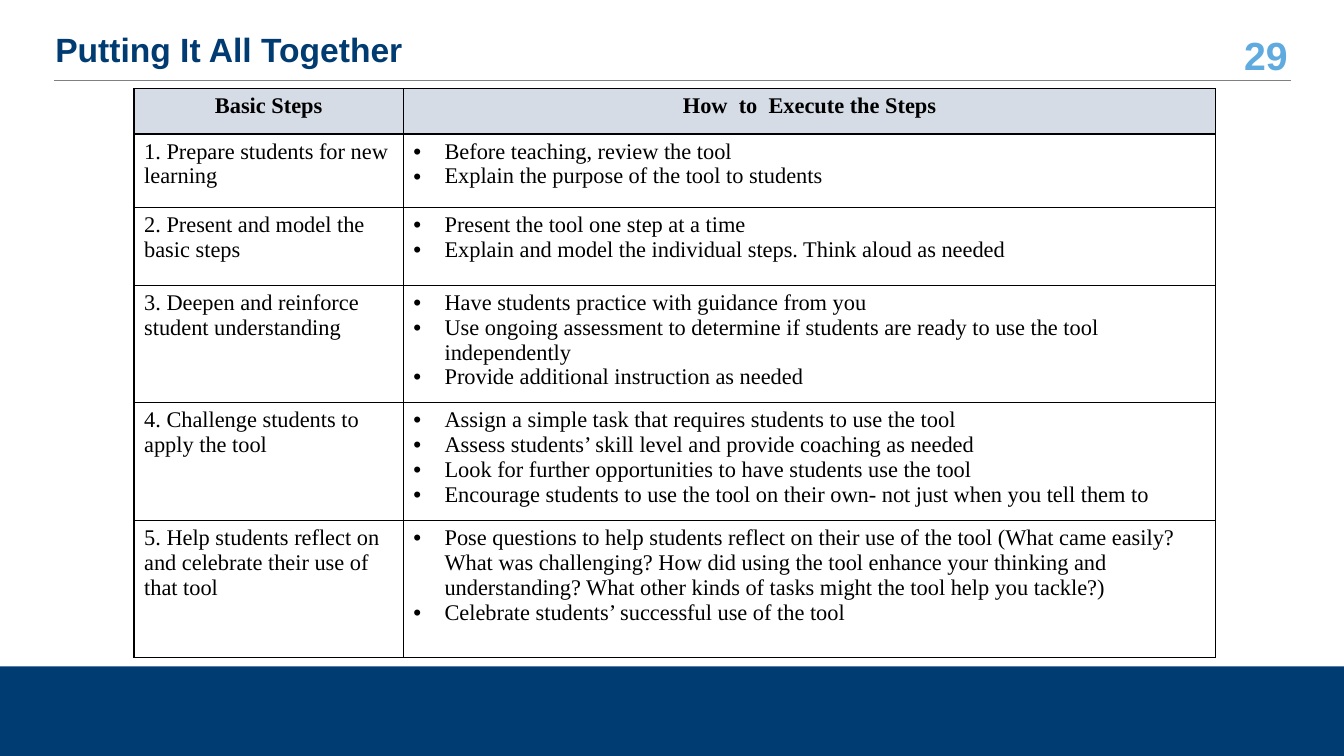
from lxml import etree
from pptx import Presentation
from pptx.dml.color import RGBColor
from pptx.enum.shapes import MSO_CONNECTOR, MSO_SHAPE
from pptx.enum.text import MSO_ANCHOR, PP_ALIGN
from pptx.oxml.ns import qn
from pptx.util import Inches, Pt

LEFT, CENTER, RIGHT = PP_ALIGN.LEFT, PP_ALIGN.CENTER, PP_ALIGN.RIGHT
MIDDLE = MSO_ANCHOR.MIDDLE
RECT, STRAIGHT = MSO_SHAPE.RECTANGLE, MSO_CONNECTOR.STRAIGHT
NAVY = RGBColor(0x00, 0x3B, 0x71)
SKY = RGBColor(0x5F, 0xAA, 0xDE)
GRAY = RGBColor(0x80, 0x80, 0x80)
PALE = RGBColor(0xD6, 0xDC, 0xE5)
WHITE = RGBColor(0xFF, 0xFF, 0xFF)
BLACK = RGBColor(0x00, 0x00, 0x00)

HEADS = ["Basic Steps", "How  to  Execute the Steps"]
STEPS = [
    ("1. Prepare students for new learning", [
        "Before teaching, review the tool",
        "Explain the purpose of the tool to students"]),
    ("2. Present and model the basic steps", [
        "Present the tool one step at a time",
        "Explain and model the individual steps. Think aloud as needed"]),
    ("3. Deepen and reinforce student understanding", [
        "Have students practice with guidance from you",
        "Use ongoing assessment to determine if students are ready to use "
        "the tool independently",
        "Provide additional instruction as needed"]),
    ("4. Challenge students to apply the tool", [
        "Assign a simple task that requires students to use the tool",
        "Assess students’ skill level and provide coaching as needed",
        "Look for further opportunities to have students use the tool",
        "Encourage students to use the tool on their own- not just when you "
        "tell them to"]),
    ("5. Help students reflect on and celebrate their use of that tool", [
        "Pose questions to help students reflect on their use of the tool "
        "(What came easily? What was challenging? How did using the tool "
        "enhance your thinking and understanding? What other kinds of tasks "
        "might the tool help you tackle?)",
        "Celebrate students’ successful use of the tool"]),
]
COLS = [2.67, 8.06]
ROWS = [0.45, 0.73, 0.77, 1.04, 1.04, 1.36]


def style(par, look):
    for key, value in look.items():
        if key == "color":
            par.font.color.rgb = value
        else:
            setattr(par.font, key, value)


def fill_cell(cell, lines, look, back, align=LEFT, dots=False):
    cell.text_frame.text = "\n".join(lines)
    for par in cell.text_frame.paragraphs:
        par.alignment = align
        if dots:
            props = par._p.get_or_add_pPr()
            props.set("marL", str(Inches(0.31)))
            props.set("indent", str(-Inches(0.31)))
            etree.SubElement(props, qn("a:buFont")).set("typeface", "Arial")
            etree.SubElement(props, qn("a:buChar")).set("char", "•")
        style(par, look)
    # Borders come before the fill in the cell's XML
    props = cell._tc.get_or_add_tcPr()
    for side in ("lnL", "lnR", "lnT", "lnB"):
        edge = etree.SubElement(props, qn("a:" + side), w=str(Pt(1)))
        paint = etree.SubElement(edge, qn("a:solidFill"))
        etree.SubElement(paint, qn("a:srgbClr")).set("val", str(BLACK))
    cell.fill.solid()
    cell.fill.fore_color.rgb = back


deck = Presentation()
deck.slide_width, deck.slide_height = Inches(13.33), Inches(7.5)
W, H = deck.slide_width, deck.slide_height
slide = deck.slides.add_slide(deck.slide_layouts[6])
shapes = slide.shapes

# Footer band
band_top = Inches(6.61)
band = shapes.add_shape(RECT, 0, band_top, W, H - band_top)
band.shadow.inherit = False
band.fill.solid()
band.fill.fore_color.rgb = NAVY
band.line.fill.background()

# Title and page number
for text, left, top, width, size, color, align, gap in [
    ("29", 12.07, 0.33, 0.8, 28, SKY, RIGHT, 1),
    ("Putting It All Together", 0.45, 0.3, 11.6, 24, NAVY, LEFT, 0.9),
]:
    box = shapes.add_textbox(Inches(left), Inches(top), Inches(width), Inches(0.42))
    frame = box.text_frame
    frame.word_wrap = True
    frame.vertical_anchor = MIDDLE
    par = frame.paragraphs[0]
    par.text, par.alignment, par.line_spacing = text, align, gap
    style(par, {"name": "Arial", "size": Pt(size), "bold": True, "color": color})

# Rule under the title
rule = shapes.add_connector(STRAIGHT, Inches(0.54), Inches(0.8), Inches(12.8), Inches(0.8))
rule.line.color.rgb = GRAY
rule.line.width = Pt(0.5)
etree.SubElement(rule._element.spPr, qn("a:effectLst"))

# Table of steps
table = shapes.add_table(
    len(ROWS), len(COLS), Inches(1.33), Inches(0.88),
    Inches(sum(COLS)), Inches(sum(ROWS))).table
table.horz_banding = False
for col, width in zip(table.columns, COLS):
    col.width = Inches(width)
for row, height in zip(table.rows, ROWS):
    row.height = Inches(height)

body = {"name": "Times New Roman", "size": Pt(16), "bold": False, "color": BLACK}
for col, head in enumerate(HEADS):
    fill_cell(table.cell(0, col), [head], {**body, "bold": True}, PALE, CENTER)
for row, (step, tasks) in enumerate(STEPS, 1):
    fill_cell(table.cell(row, 0), [step], body, WHITE)
    fill_cell(table.cell(row, 1), tasks, body, WHITE, dots=True)

deck.save("out.pptx")
